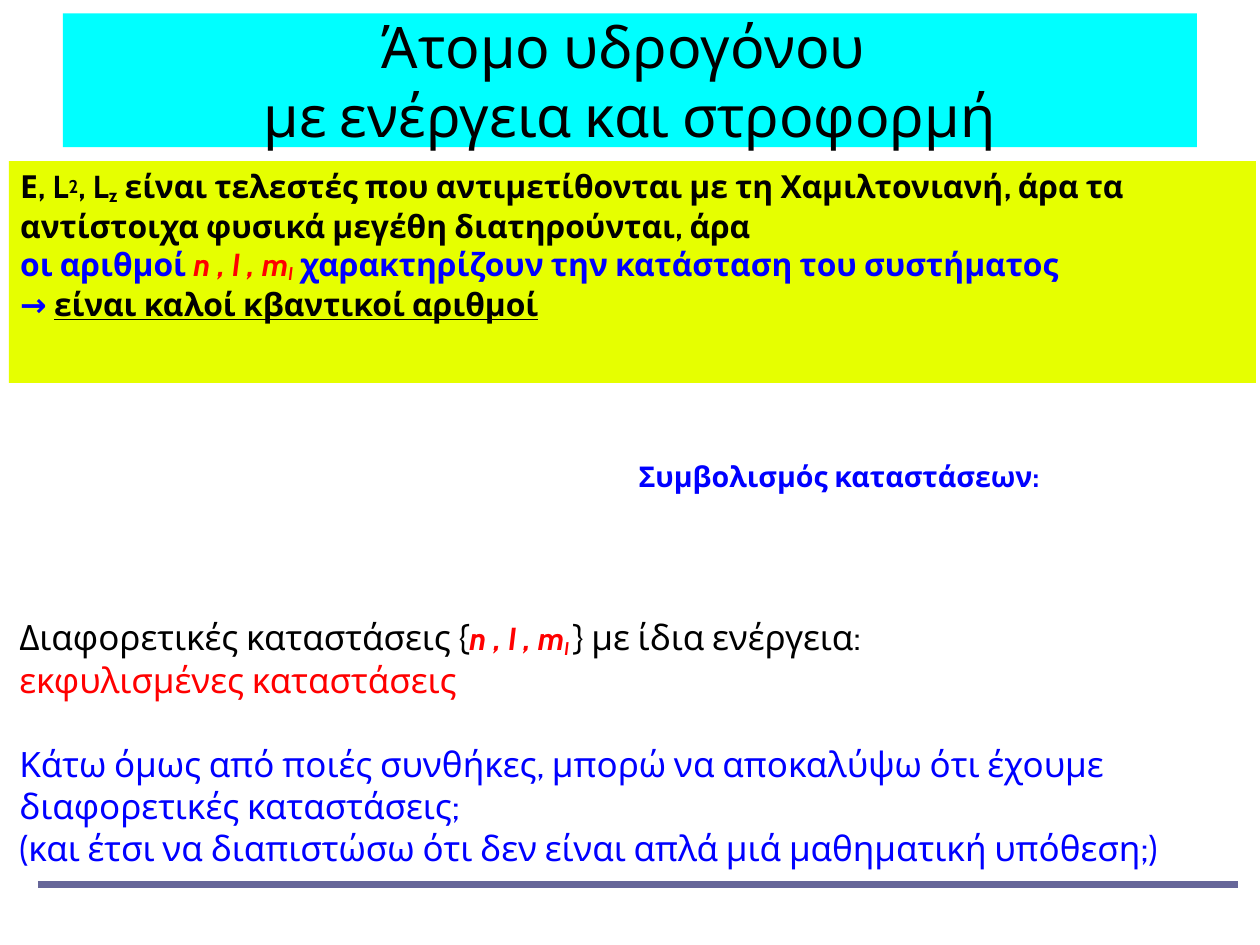
import pptx
import pptx.dml.color
import pptx.enum.shapes
import pptx.enum.text
import pptx.oxml.ns
import pptx.util
from lxml import etree

Cm = pptx.util.Cm
Pt = pptx.util.Pt
RGBColor = pptx.dml.color.RGBColor
PP_ALIGN = pptx.enum.text.PP_ALIGN
MSO_ANCHOR = pptx.enum.text.MSO_ANCHOR

BLACK = RGBColor(0x00, 0x00, 0x00)
BLUE = RGBColor(0x00, 0x00, 0xFF)
RED = RGBColor(0xFF, 0x00, 0x00)
CYAN = RGBColor(0x00, 0xFF, 0xFF)
YELLOW = RGBColor(0xE6, 0xFF, 0x00)
SLATE = RGBColor(0x66, 0x66, 0x99)

MAIN_FONT = "Cabin"
SYMBOL_FONT = "Calibri"
BLANK_LAYOUT = 6


def add_text(paragraph, text, size=20, color=BLACK, font=MAIN_FONT,
             bold=False, italic=False, underline=False, baseline=0):
    """Append a run; baseline is a raise (+) or drop (-) in percent."""
    run = paragraph.add_run()
    run.text = text
    run.font.size = Pt(size)
    run.font.color.rgb = color
    run.font.name = font
    run.font.bold = bold
    run.font.italic = italic
    if underline:
        run.font.underline = True
    if baseline:
        run._r.get_or_add_rPr().set("baseline", str(baseline * 1000))


def add_quantum_numbers(paragraph, subscript="l"):
    symbols = dict(color=RED, italic=True, bold=True)
    add_text(paragraph, "n , ", **symbols)
    add_text(paragraph, "l ", font=SYMBOL_FONT, **symbols)
    add_text(paragraph, ", m", **symbols)
    add_text(paragraph, subscript, font=SYMBOL_FONT, baseline=-14, **symbols)


def add_panel(slide, box, fill):
    panel = slide.shapes.add_shape(pptx.enum.shapes.MSO_SHAPE.RECTANGLE, *box)
    panel.shadow.inherit = False
    panel.fill.solid()
    panel.fill.fore_color.rgb = fill
    panel.line.fill.background()
    panel.text_frame.word_wrap = True
    return panel.text_frame


def add_free_text(slide, box):
    frame = slide.shapes.add_textbox(*box).text_frame
    frame.word_wrap = True
    return frame


def add_title(slide, box):
    frame = add_panel(slide, box, CYAN)
    frame.vertical_anchor = MSO_ANCHOR.MIDDLE
    frame.margin_left = frame.margin_right = 0
    frame.margin_top = frame.margin_bottom = 0
    heading = frame.paragraphs[0]
    heading.alignment = PP_ALIGN.CENTER
    add_text(heading, "Άτομο υδρογόνου ", size=36)
    heading.add_line_break()
    add_text(heading, "με ενέργεια και στροφορμή", size=36)


def add_operators(slide, box):
    frame = add_panel(slide, box, YELLOW)
    frame.vertical_anchor = MSO_ANCHOR.TOP
    conserved, numbers, conclusion = (
        frame.paragraphs[0], frame.add_paragraph(), frame.add_paragraph())
    for paragraph in frame.paragraphs:
        paragraph.alignment = PP_ALIGN.LEFT

    for text, baseline in (
            ("Ε, L", 0), ("2", 14), (", L", 0), ("z", -14),
            (" είναι τελεστές που αντιμετίθονται με τη Χαμιλτονιανή, άρα τα "
             "αντίστοιχα φυσικά μεγέθη διατηρούνται, άρα", 0)):
        add_text(conserved, text, bold=True, baseline=baseline)

    add_text(numbers, "οι αριθμοί ", color=BLUE, bold=True)
    add_quantum_numbers(numbers)
    add_text(numbers, " χαρακτηρίζουν την κατάσταση του συστήματος",
             color=BLUE, bold=True)

    add_text(conclusion, "→ ", color=BLUE, bold=True, italic=True)
    add_text(conclusion, "είναι καλοί κβαντικοί αριθμοί",
             bold=True, underline=True)


def add_degeneracy(slide, box):
    frame = add_free_text(slide, box)
    same_energy = frame.paragraphs[0]
    add_text(same_energy, "Διαφορετικές καταστάσεις {", size=22)
    add_quantum_numbers(same_energy, subscript="l ")
    add_text(same_energy, "} με ίδια ενέργεια:", size=22)

    for text, color, gap in (
            ("εκφυλισμένες καταστάσεις", RED, 0),
            ("Κάτω όμως από ποιές συνθήκες, μπορώ να αποκαλύψω ότι έχουμε "
             "διαφορετικές καταστάσεις;", BLUE, 26.4),
            ("(και έτσι να διαπιστώσω ότι δεν είναι απλά μιά μαθηματική "
             "υπόθεση;)", BLUE, 0)):
        paragraph = frame.add_paragraph()
        paragraph.space_before = Pt(gap)
        add_text(paragraph, text, size=22, color=color)


def add_notation_label(slide, box):
    frame = add_free_text(slide, box)
    add_text(frame.paragraphs[0], "Συμβολισμός καταστάσεων:",
             size=18, color=BLUE, bold=True)


def add_footer_rule(slide, left, right, y):
    rule = slide.shapes.add_connector(
        pptx.enum.shapes.MSO_CONNECTOR.STRAIGHT, left, y, right, y)
    rule.line.color.rgb = SLATE
    rule.line.width = Pt(4.31)
    etree.SubElement(rule._element.spPr, pptx.oxml.ns.qn("a:effectLst"))


def main():
    deck = pptx.Presentation()
    deck.slide_width, deck.slide_height = Cm(28), Cm(21)
    slide = deck.slides.add_slide(deck.slide_layouts[BLANK_LAYOUT])

    add_footer_rule(slide, Cm(0.84), Cm(27.5), Cm(19.66))
    add_title(slide, (Cm(1.4), Cm(0.3), Cm(25.2), Cm(2.97)))
    add_operators(slide, (Cm(0.2), Cm(3.58), Cm(27.71), Cm(4.93)))
    add_degeneracy(slide, (Cm(0.18), Cm(13.56), Cm(27.8), Cm(5.92)))
    add_notation_label(slide, (Cm(13.94), Cm(10.08), Cm(11.02), Cm(1)))

    deck.save("out.pptx")


if __name__ == "__main__":
    main()
